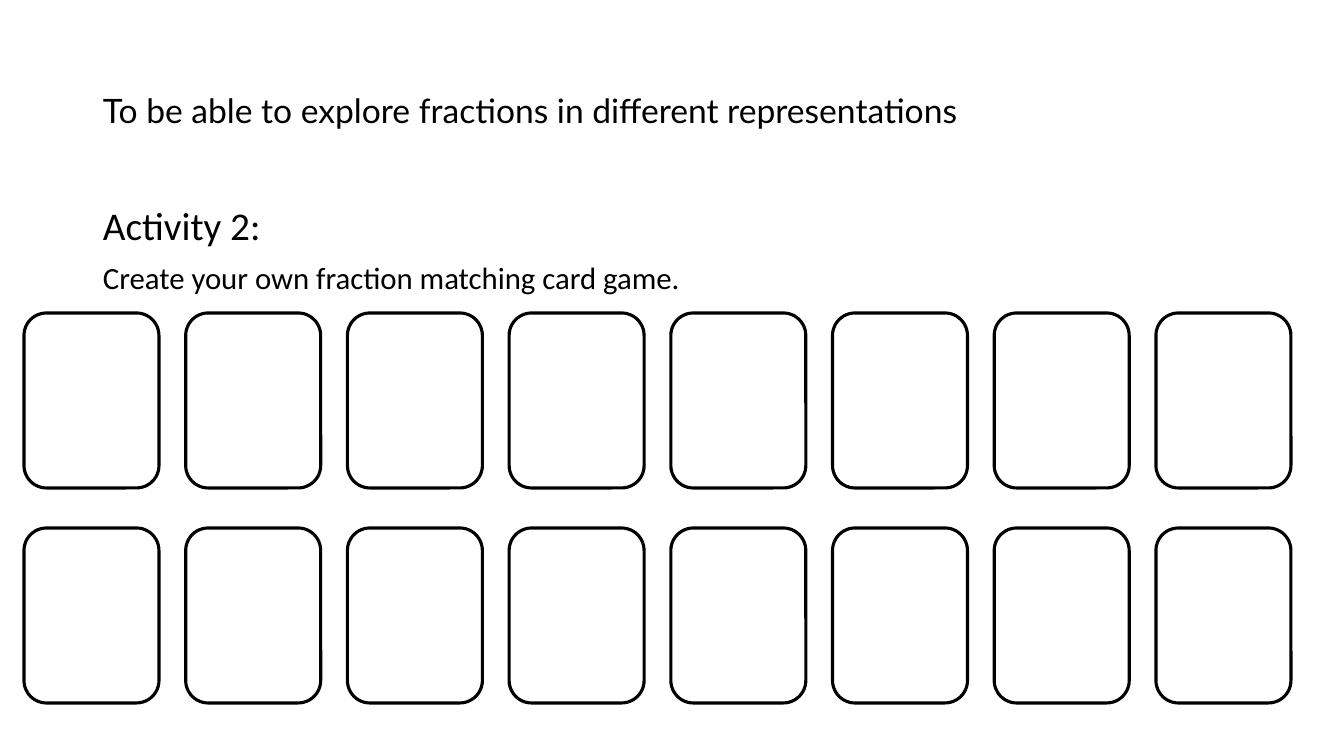
from pptx import Presentation
from pptx import util as u
from pptx.dml.color import RGBColor
from pptx.enum import shapes, text

PX = 12192000 / 1344  # EMU per px
HUE = {"ink": "000000", "card": "FFFFFF"}


def px(n):
    return u.Emu(round(n * PX))


def hue(name):
    return RGBColor.from_string(HUE[name])


def write(slide, box, lines, anchor):
    """Put lines of (words, font, size) in a text box."""
    frame = slide.shapes.add_textbox(*map(px, box)).text_frame
    frame.word_wrap = True
    frame.vertical_anchor = anchor
    for i, (words, font, size) in enumerate(lines):
        para = frame.add_paragraph() if i else frame.paragraphs[0]
        para.text = words
        para.line_spacing = 0.9
        if i:
            para.space_before = u.Pt(10)
        para.font.name = font
        para.font.size = u.Pt(size)
        para.font.color.rgb = hue("ink")


def title(slide, box):
    line = ("To be able to explore fractions in different representations", "Lato", 24)
    write(slide, box, [line], text.MSO_ANCHOR.MIDDLE)


def task(slide, box):
    lines = [
        ("Activity 2:", "Calibri", 28),
        ("Create your own fraction matching card game.", "Calibri", 22),
    ]
    write(slide, box, lines, text.MSO_ANCHOR.TOP)


def cards(slide, box, rows=2, cols=8, wide=135, high=175):
    """Spread blank cards evenly over the box."""
    left, top, width, height = box
    across = (width - wide) / (cols - 1)
    down = (height - high) / (rows - 1)
    for row in range(rows):
        for col in range(cols):
            spot = (left + col * across, top + row * down, wide, high)
            card = slide.shapes.add_shape(
                shapes.MSO_SHAPE.ROUNDED_RECTANGLE, *map(px, spot))
            card.shadow.inherit = False
            card.fill.solid()
            card.fill.fore_color.rgb = hue("card")
            card.line.color.rgb = hue("ink")
            card.line.width = u.Pt(2.25)


def main():
    deck = Presentation()
    deck.slide_width, deck.slide_height = px(1344), px(756)
    slide = deck.slides.add_slide(deck.slide_layouts[6])
    # Heading and instructions
    title(slide, (93, 40, 968, 146))
    task(slide, (93, 202, 1159, 480))
    # Two rows of cards to fill in
    cards(slide, (24, 313, 1267, 390))
    deck.save("out.pptx")


if __name__ == "__main__":
    main()
